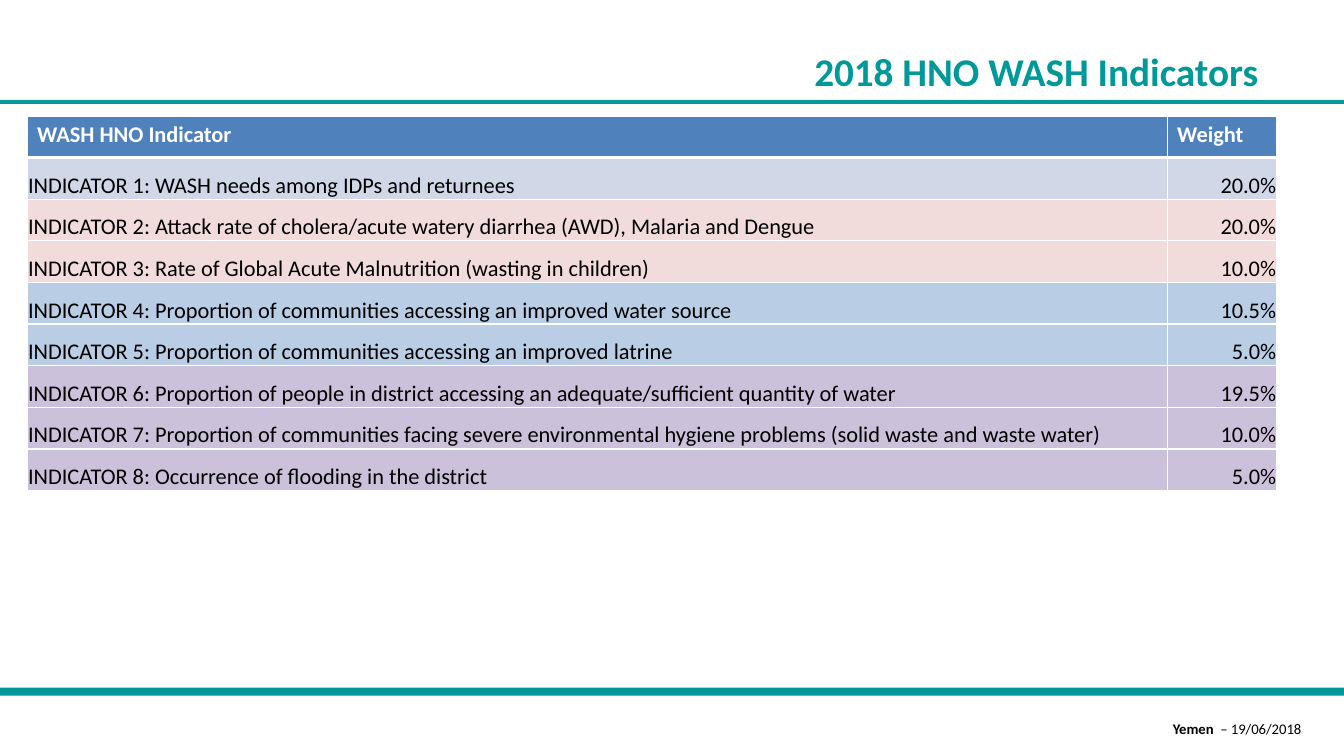
from lxml import etree
from pptx import Presentation
from pptx.dml.color import RGBColor
from pptx.enum.shapes import MSO_SHAPE
from pptx.enum.text import MSO_ANCHOR, MSO_AUTO_SIZE, PP_ALIGN
from pptx.oxml.ns import qn
from pptx.util import Pt

RECT = MSO_SHAPE.RECTANGLE
MIDDLE, BOTTOM = MSO_ANCHOR.MIDDLE, MSO_ANCHOR.BOTTOM
LEFT, RIGHT = PP_ALIGN.LEFT, PP_ALIGN.RIGHT
FIXED = MSO_AUTO_SIZE.NONE

TEAL = RGBColor(0x00, 0x99, 0x99)
BLACK = RGBColor(0x00, 0x00, 0x00)
WHITE = RGBColor(0xFF, 0xFF, 0xFF)
BLUE = RGBColor(0x4F, 0x81, 0xBD)
PALE = RGBColor(0xD0, 0xD8, 0xE8)
PINK = RGBColor(0xF2, 0xDC, 0xDB)
SKY = RGBColor(0xB9, 0xCD, 0xE5)
LILAC = RGBColor(0xCC, 0xC1, 0xDA)

FONT = "Calibri"
WIDTH, HEIGHT = 960, 540
HEADS = ("WASH HNO Indicator", "Weight")
ROWS = [
    ("WASH needs among IDPs and returnees", "20.0%", PALE),
    ("Attack rate of cholera/acute watery diarrhea (AWD), Malaria and Dengue",
     "20.0%", PINK),
    ("Rate of Global Acute Malnutrition (wasting in children)", "10.0%", PINK),
    ("Proportion of communities accessing an improved water source",
     "10.5%", SKY),
    ("Proportion of communities accessing an improved latrine", "5.0%", SKY),
    ("Proportion of people in district accessing an adequate/sufficient "
     "quantity of water", "19.5%", LILAC),
    ("Proportion of communities facing severe environmental hygiene problems "
     "(solid waste and waste water)", "10.0%", LILAC),
    ("Occurrence of flooding in the district", "5.0%", LILAC),
]


def add_run(para, text, size, color, bold=False):
    run = para.add_run()
    run.text = text
    font = run.font
    font.name, font.size, font.bold = FONT, Pt(size), bold
    font.color.rgb = color


def add_bar(slide, left, top, width, height):
    bar = slide.shapes.add_shape(RECT, Pt(left), Pt(top), Pt(width), Pt(height))
    bar.shadow.inherit = False
    bar.fill.solid()
    bar.fill.fore_color.rgb = TEAL
    bar.line.fill.background()


def add_title(slide, left, top, width, height):
    add_bar(slide, 0, top + 35.3, WIDTH, 2.9)
    title = slide.shapes.title
    title.left, title.top = Pt(left), Pt(top)
    title.width, title.height = Pt(width), Pt(height)
    frame = title.text_frame
    frame.auto_size = FIXED
    frame.vertical_anchor = MIDDLE
    para = frame.paragraphs[0]
    para.alignment = RIGHT
    add_run(para, "2018 HNO WASH Indicators ", 28, TEAL, True)


def add_footer(slide, left, top, width, height):
    add_bar(slide, 0, top - 19.4, WIDTH, 5.8)
    box = slide.shapes.add_textbox(Pt(left), Pt(top), Pt(width), Pt(height))
    frame = box.text_frame
    frame.word_wrap = True
    para = frame.paragraphs[0]
    para.alignment = RIGHT
    add_run(para, "Yemen ", 10.5, BLACK, True)
    add_run(para, " – 19/06/2018", 10.5, BLACK)


def set_edges(cell, top, base):
    props = cell._tc.get_or_add_tcPr()
    for side, size in (("L", 1), ("R", 1), ("T", top), ("B", base)):
        line = etree.SubElement(props, qn(f"a:ln{side}"), w=str(Pt(size)))
        fill = etree.SubElement(line, qn("a:solidFill"))
        etree.SubElement(fill, qn("a:srgbClr"), val=str(WHITE))


def fill_cell(cell, text, fill, head, align, top, base):
    set_edges(cell, top, base)
    cell.fill.solid()
    cell.fill.fore_color.rgb = fill
    if not head:
        cell.vertical_anchor = BOTTOM
        cell.margin_left = cell.margin_right = cell.margin_top = Pt(0.7)
        cell.margin_bottom = Pt(0)
    para = cell.text_frame.paragraphs[0]
    para.alignment = align
    add_run(para, text, 16, WHITE if head else BLACK, head)


def add_grid(slide, left, top, width, height):
    count = len(ROWS) + 1
    frame = slide.shapes.add_table(
        count, 2, Pt(left), Pt(top), Pt(width), Pt(height))
    table = frame.table
    last = 78.5
    table.columns[0].width = Pt(width - last)
    table.columns[1].width = Pt(last)
    for row in table.rows:
        row.height = Pt(height / count)
    for col, text in enumerate(HEADS):
        fill_cell(table.cell(0, col), text, BLUE, True, LEFT, 1, 3)
    for num, (name, weight, fill) in enumerate(ROWS, 1):
        edge = 3 if num == 1 else 1
        label = f"INDICATOR {num}: {name}"
        fill_cell(table.cell(num, 0), label, fill, False, LEFT, edge, 1)
        fill_cell(table.cell(num, 1), weight, fill, False, RIGHT, edge, 1)


def main():
    deck = Presentation()
    deck.slide_width, deck.slide_height = Pt(WIDTH), Pt(HEIGHT)
    slide = deck.slides.add_slide(deck.slide_layouts[5])
    add_footer(slide, 457.2, 510.5, 479.5, 25)
    add_title(slide, 223.2, 36, 689, 28.8)
    add_grid(slide, 19.4, 82.8, 892.8, 267.8)
    deck.save("out.pptx")


if __name__ == "__main__":
    main()
